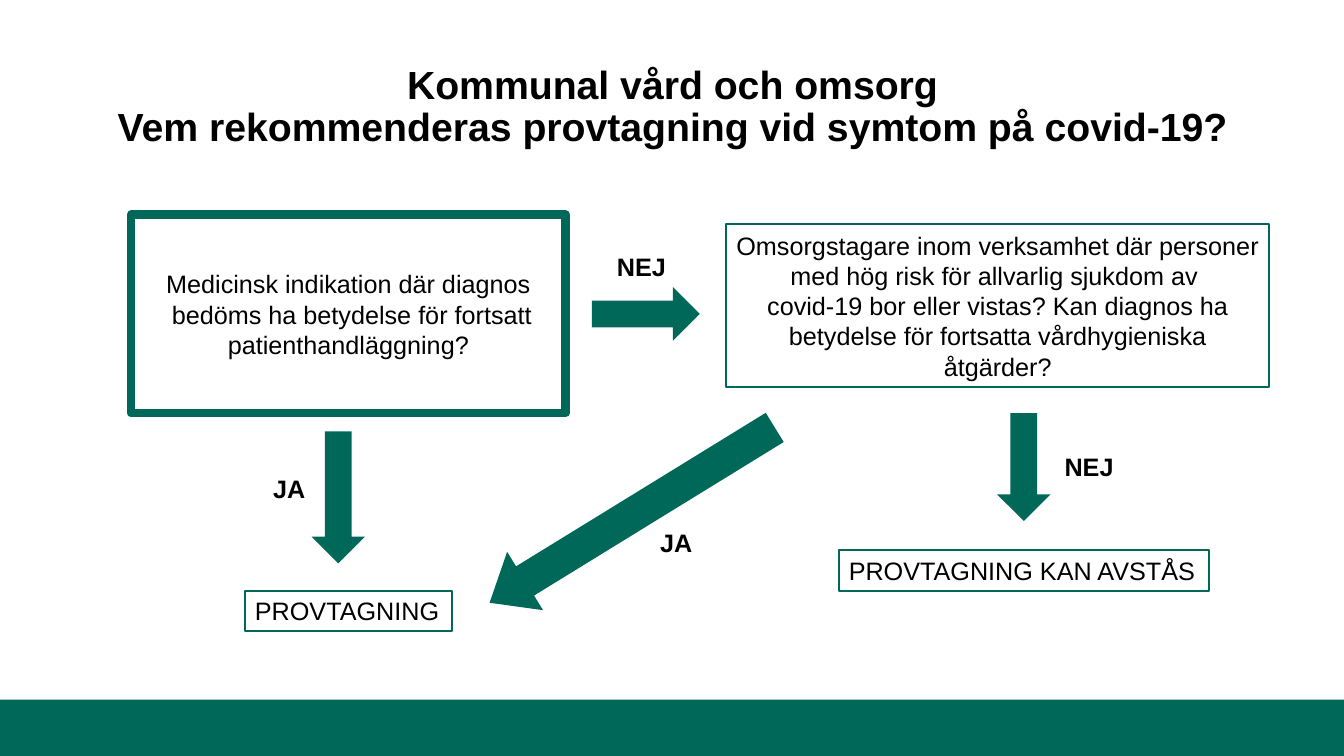
from dataclasses import dataclass

from pptx import Presentation
from pptx.dml.color import RGBColor
from pptx.enum.shapes import MSO_SHAPE
from pptx.enum.text import MSO_ANCHOR, MSO_AUTO_SIZE, PP_ALIGN
from pptx.oxml.ns import qn
from pptx.util import Emu, Pt

RECTANGLE = MSO_SHAPE.RECTANGLE
DOWN_ARROW = MSO_SHAPE.DOWN_ARROW
RIGHT_ARROW = MSO_SHAPE.RIGHT_ARROW
MIDDLE = MSO_ANCHOR.MIDDLE
NO_AUTOFIT = MSO_AUTO_SIZE.NONE
LEFT, CENTER = PP_ALIGN.LEFT, PP_ALIGN.CENTER

EMU_PER_PX = 9144  # 100 px to the inch
GREEN, BLACK = "006858", "000000"
FONT = "Arial"
TEXT_SIZE, TITLE_SIZE = 18, 28
LABEL_HEIGHT = 40


@dataclass
class Place:
    left: int
    top: int
    width: int
    height: int


@dataclass
class Arrow:
    place: Place
    kind: MSO_SHAPE = DOWN_ARROW
    rotation: float = 0
    head: float = 0.5


@dataclass
class Label:
    text: str
    place: Place
    framed: bool = False


ARROWS = [
    Arrow(Place(309, 428, 53, 131)),
    Arrow(Place(587, 285, 107, 53), RIGHT_ARROW),
    Arrow(Place(593, 345, 68, 332), rotation=58.4, head=0.607),
    Arrow(Place(989, 410, 53, 107)),
]

LABELS = [
    Label("JA", Place(261, 465, 56, LABEL_HEIGHT)),
    Label("NEJ", Place(602, 244, 69, LABEL_HEIGHT)),
    Label("JA", Place(645, 518, 56, LABEL_HEIGHT)),
    Label("NEJ", Place(1046, 443, 69, LABEL_HEIGHT)),
    Label("PROVTAGNING", Place(243, 586, 205, LABEL_HEIGHT), framed=True),
    Label("PROVTAGNING KAN AVSTÅS", Place(832, 546, 367, LABEL_HEIGHT), framed=True),
]


def px(length: int) -> Emu:
    return Emu(length * EMU_PER_PX)


def color(value: str) -> RGBColor:
    return RGBColor.from_string(value)


def move(shape, place: Place) -> None:
    shape.left, shape.top = px(place.left), px(place.top)
    shape.width, shape.height = px(place.width), px(place.height)


def add_preset(page, kind: MSO_SHAPE, place: Place):
    shape = page.shapes.add_shape(
        kind, px(place.left), px(place.top), px(place.width), px(place.height))
    shape.shadow.inherit = False
    return shape


def add_solid(page, kind: MSO_SHAPE, place: Place):
    shape = add_preset(page, kind, place)
    shape.fill.solid()
    shape.fill.fore_color.rgb = color(GREEN)
    shape.line.fill.background()
    return shape


def outline(shape, weight: float) -> None:
    shape.fill.background()
    shape.line.color.rgb = color(GREEN)
    shape.line.width = Pt(weight)


def write(para, lines: list[str], size: int = TEXT_SIZE, bold: bool = False,
          align: PP_ALIGN = CENTER) -> None:
    para.alignment = align
    for index, line in enumerate(lines):
        if index:
            para.add_line_break()
        span = para.add_run()
        span.text = line
        span.font.name, span.font.size, span.font.bold = FONT, Pt(size), bold
        span.font.color.rgb = color(BLACK)


def set_frame(shape, wrap: bool = True, inset: bool = True):
    frame = shape.text_frame
    frame.auto_size, frame.word_wrap = NO_AUTOFIT, wrap
    frame.vertical_anchor = MIDDLE
    if not inset:
        frame.margin_left = frame.margin_right = 0
        frame.margin_top = frame.margin_bottom = 0
    return frame


def add_label(page, label: Label) -> None:
    box = add_preset(page, RECTANGLE, label.place)
    if label.framed:
        outline(box, 1.5)
    else:
        box.fill.background()
        box.line.fill.background()
    frame = set_frame(box, wrap=False)
    write(frame.paragraphs[0], [label.text], bold=not label.framed, align=LEFT)


def main() -> None:
    deck = Presentation()
    deck.slide_width, deck.slide_height = px(1333), px(750)
    page = deck.slides.add_slide(deck.slide_layouts[1])

    # Footer band
    add_solid(page, RECTANGLE, Place(0, 694, 1333, 56))

    # Title
    title = page.shapes.title
    move(title, Place(88, 36, 1158, 142))
    heading = set_frame(title, inset=False).paragraphs[0]
    heading.line_spacing = 0.9
    write(heading, ["Kommunal vård och omsorg",
                    "Vem rekommenderas provtagning vid symtom på covid-19?"],
          size=TITLE_SIZE, bold=True)

    # First question, without bullet
    first_question = page.placeholders[1]
    move(first_question, Place(130, 213, 431, 197))
    outline(first_question, 6)
    para = set_frame(first_question, inset=False).paragraphs[0]
    para.space_before = Pt(0)
    write(para, ["Medicinsk indikation där diagnos",
                 " bedöms ha betydelse för fortsatt patienthandläggning?"])
    properties = para._p.get_or_add_pPr()
    properties.set("marL", "0")
    properties.set("indent", "0")
    properties.append(properties.makeelement(qn("a:buNone"), {}))

    # Second question
    second_question = add_preset(page, RECTANGLE, Place(720, 222, 539, 162))
    outline(second_question, 1.5)
    frame = set_frame(second_question)
    write(frame.paragraphs[0], ["Omsorgstagare inom verksamhet där personer "
                                "med hög risk för allvarlig sjukdom av "])
    write(frame.add_paragraph(), ["covid-19 bor eller vistas? Kan diagnos ha betydelse "
                                  "för fortsatta vårdhygieniska åtgärder?"])

    # Arrows, answers and outcomes
    for arrow in ARROWS:
        shape = add_solid(page, arrow.kind, arrow.place)
        shape.rotation = arrow.rotation
        shape.adjustments[1] = arrow.head
    for label in LABELS:
        add_label(page, label)

    deck.save("out.pptx")


if __name__ == "__main__":
    main()
